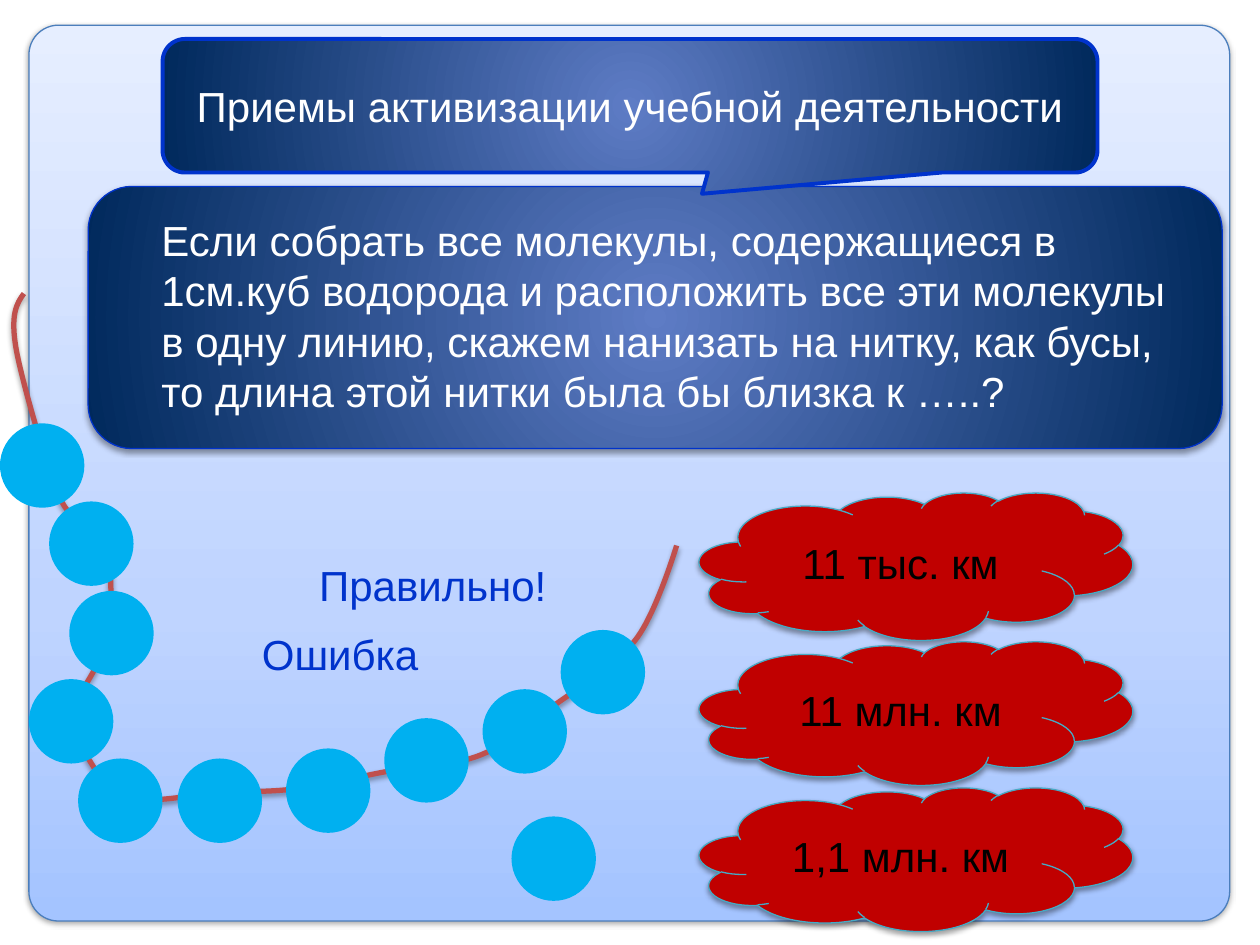
from dataclasses import dataclass

from pptx import Presentation
from pptx.dml.color import RGBColor
from pptx.enum.shapes import MSO_SHAPE as Preset
from pptx.enum.text import MSO_ANCHOR as Anchor, MSO_AUTO_SIZE as AutoSize, PP_ALIGN as Align
from pptx.oxml import parse_xml
from pptx.oxml.ns import nsdecls, qn
from pptx.util import Inches, Pt

WIDTH, HEIGHT = Inches(10), Inches(7.5)
COL, ROW = WIDTH / 10, HEIGHT / 7.5
WHITE = RGBColor(0xFF, 0xFF, 0xFF)
BLACK = RGBColor(0, 0, 0)
BLUE = RGBColor(0x00, 0x33, 0xCC)
FRAME_BLUE = RGBColor(0x4B, 0x7E, 0xBC)
BEAD_BLUE = RGBColor(0x00, 0xB0, 0xF0)
CLOUD_RED = RGBColor(0xC0, 0x00, 0x00)
CLOUD_EDGE = RGBColor(0x46, 0xAA, 0xC5)
THREAD_RED = RGBColor(0xC0, 0x50, 0x4D)
SKY = [(0, RGBColor(0xA4, 0xC4, 0xFF)), (35, RGBColor(0xBF, 0xD4, 0xFF)),
       (100, RGBColor(0xE6, 0xEE, 0xFF))]
NAVY = [(0, RGBColor(0x5E, 0x7C, 0xC5)), (100, RGBColor(0x00, 0x29, 0x5C))]
UPWARD = '<a:lin ang="16200000" scaled="0"/>'
RADIAL = ('<a:path path="circle"><a:fillToRect l="50000" t="50000" '
          'r="50000" b="50000"/></a:path>')

BEAD = 0.67
BEADS = [(0.39, 1.98), (0.55, 2.69), (0.23, 3.39), (0.62, 4.02), (1.41, 4.02), (2.27, 3.94),
         (3.05, 3.7), (3.83, 3.47), (4.45, 3), (0, 1.36), (4.06, 4.48)]
THREAD_START = (0.19, 0.33)
THREAD_CURVES = [
    [(0.13, 0.41), (0.08, 0.5), (0.13, 0.78)],
    [(0.18, 1.05), (0.38, 1.74), (0.49, 1.98)],
    [(0.61, 2.22), (0.76, 2.04), (0.82, 2.21)],
    [(0.88, 2.38), (0.9, 2.79), (0.86, 3.01)],
    [(0.83, 3.23), (0.68, 3.42), (0.62, 3.54)],
    [(0.57, 3.65), (0.48, 3.56), (0.54, 3.68)],
    [(0.59, 3.81), (0.76, 4.21), (0.96, 4.31)],
    [(1.15, 4.41), (1.69, 4.28), (1.69, 4.28)],
    [(1.93, 4.28), (2.11, 4.29), (2.35, 4.26)],
    [(2.58, 4.24), (2.85, 4.16), (3.09, 4.12)],
    [(3.34, 4.07), (3.6, 4.08), (3.82, 3.99)],
    [(4.04, 3.9), (4.21, 3.74), (4.41, 3.59)],
    [(4.62, 3.44), (4.89, 3.28), (5.05, 3.07)],
    [(5.21, 2.86), (5.37, 2.33), (5.37, 2.33)],
]
ANSWERS = [("1,1 млн. км", 2.34, 1.14), ("11 тыс. км", 0, 1.17), ("11 млн. км", 1.18, 1.14)]


@dataclass(frozen=True)
class Box:
    col: float
    row: float
    cols: float
    rows: float

    def inner(self, col, row, cols, rows):
        return Box(self.col + col, self.row + row, cols, rows)

    def point(self, col, row):
        return round((self.col + col) * COL), round((self.row + row) * ROW)

    def frame(self):
        return (*self.point(0, 0), round(self.cols * COL), round(self.rows * ROW))


def paint(shape, fill=None, edge=None, weight=0.75):
    shape.shadow.inherit = False
    if fill is None:
        shape.fill.background()
    else:
        shape.fill.solid()
        shape.fill.fore_color.rgb = fill
    if edge is None:
        shape.line.fill.background()
    else:
        shape.line.color.rgb = edge
        shape.line.width = Pt(weight)


def blend(shape, stops, direction):
    marks = "".join(f'<a:gs pos="{pos * 1000}"><a:srgbClr val="{color}"/></a:gs>'
                    for pos, color in stops)
    gradient = parse_xml(f'<a:gradFill {nsdecls("a")} rotWithShape="1">'
                         f'<a:gsLst>{marks}</a:gsLst>{direction}</a:gradFill>')
    props = shape._element.spPr
    props.replace(props.find(qn("a:solidFill")), gradient)


def cast_shadow(shape):
    effects = shape._element.spPr.find(qn("a:effectLst"))
    effects.append(parse_xml(
        f'<a:outerShdw {nsdecls("a")} blurRad="40000" dist="20000" dir="5400000" '
        'rotWithShape="0"><a:srgbClr val="000000"><a:alpha val="38000"/></a:srgbClr>'
        '</a:outerShdw>'))


def add_preset(slide, preset, box, fill=None, edge=None, weight=0.75):
    shape = slide.shapes.add_shape(preset, *box.frame())
    paint(shape, fill, edge, weight)
    return shape


def write(shape, text, color, align=Align.CENTER):
    paragraph = shape.text_frame.paragraphs[0]
    paragraph.alignment = align
    run = paragraph.add_run()
    run.text = text
    run.font.name = "Arial"
    run.font.size = Pt(24)
    run.font.color.rgb = color
    return paragraph


def backdrop(slide, box):
    panel = add_preset(slide, Preset.ROUNDED_RECTANGLE, box, WHITE, FRAME_BLUE)
    panel.adjustments[0] = 0.033
    blend(panel, SKY, UPWARD)
    cast_shadow(panel)


def bend(strand):
    route = next(strand._element.iter(qn("a:moveTo"))).getparent()
    legs = route.findall(qn("a:lnTo"))
    for first in range(0, len(legs), 3):
        curve = parse_xml(f'<a:cubicBezTo {nsdecls("a")}/>')
        for leg in legs[first:first + 3]:
            curve.append(leg[0])
            route.remove(leg)
        route.append(curve)


def thread(slide, box):
    outline = slide.shapes.build_freeform(*box.point(*THREAD_START))
    outline.add_line_segments([box.point(*spot) for curve in THREAD_CURVES for spot in curve],
                              close=False)
    strand = outline.convert_to_shape()
    bend(strand)
    paint(strand, edge=THREAD_RED, weight=3)
    cast_shadow(strand)


def beads(slide, box):
    for col, row in BEADS:
        add_preset(slide, Preset.OVAL, box.inner(col, row, BEAD, BEAD), BEAD_BLUE)


def answers(slide, box):
    for option, row, rows in ANSWERS:
        cloud = add_preset(slide, Preset.CLOUD, box.inner(0, row, box.cols, rows),
                           CLOUD_RED, CLOUD_EDGE)
        cast_shadow(cloud)
        write(cloud, option, BLACK)


def question(slide, box, text):
    body = slide.placeholders[1]
    body.left, body.top, body.width, body.height = box.frame()
    props = body._element.spPr
    props.append(parse_xml(
        f'<a:prstGeom {nsdecls("a")} prst="roundRect"><a:avLst/></a:prstGeom>'))
    paint(body, WHITE, BLUE)
    blend(body, NAVY, RADIAL)
    cast_shadow(body)
    slide.shapes._spTree.append(body._element)
    frame = body.text_frame
    frame.auto_size = AutoSize.NONE
    frame.vertical_anchor = Anchor.TOP
    frame.margin_top = Inches(0.12)
    paragraph = write(body, text, WHITE, Align.LEFT)
    paragraph.space_before = Pt(7)
    paragraph.line_spacing = 1.0
    style = paragraph._p.get_or_add_pPr()
    style.set("marL", str(Inches(0.38)))
    style.set("indent", "0")
    style.append(parse_xml(f'<a:buNone {nsdecls("a")}/>'))


def verdicts(slide, box):
    for text, place in (("Правильно!", box.inner(0.23, 0, 3.59, 1)),
                        ("Ошибка", box.inner(0, 0.55, 2.58, 1))):
        write(add_preset(slide, Preset.OVAL, place), text, BLUE)


def heading(slide, box, text):
    callout = add_preset(slide, Preset.ROUNDED_RECTANGULAR_CALLOUT, box, WHITE, BLUE, 2.25)
    for index, value in enumerate((0.077, 0.659, 0.167)):
        callout.adjustments[index] = value
    blend(callout, NAVY, RADIAL)
    callout.text_frame.word_wrap = False
    write(callout, text, WHITE)


def main():
    deck = Presentation()
    deck.slide_width, deck.slide_height = WIDTH, HEIGHT
    slide = deck.slides.add_slide(deck.slide_layouts[1])
    unused = slide.shapes.title._element
    unused.getparent().remove(unused)
    necklace = Box(0, 2, 5.4, 5.2)
    backdrop(slide, Box(0.23, 0.2, 9.53, 7.11))
    thread(slide, necklace)
    answers(slide, Box(5.55, 3.91, 3.44, 3.48))
    question(slide, Box(0.7, 1.48, 9, 2.08),
             "Если собрать все молекулы, содержащиеся в 1см.куб водорода и расположить "
             "все эти молекулы в одну линию, скажем нанизать на нитку, как бусы, "
             "то длина этой нитки была бы близка к …..?")
    beads(slide, necklace)
    verdicts(slide, Box(1.41, 4.14, 3.82, 1.55))
    heading(slide, Box(1.29, 0.31, 7.42, 1.06), "Приемы активизации учебной деятельности")
    deck.save("out.pptx")


if __name__ == "__main__":
    main()
